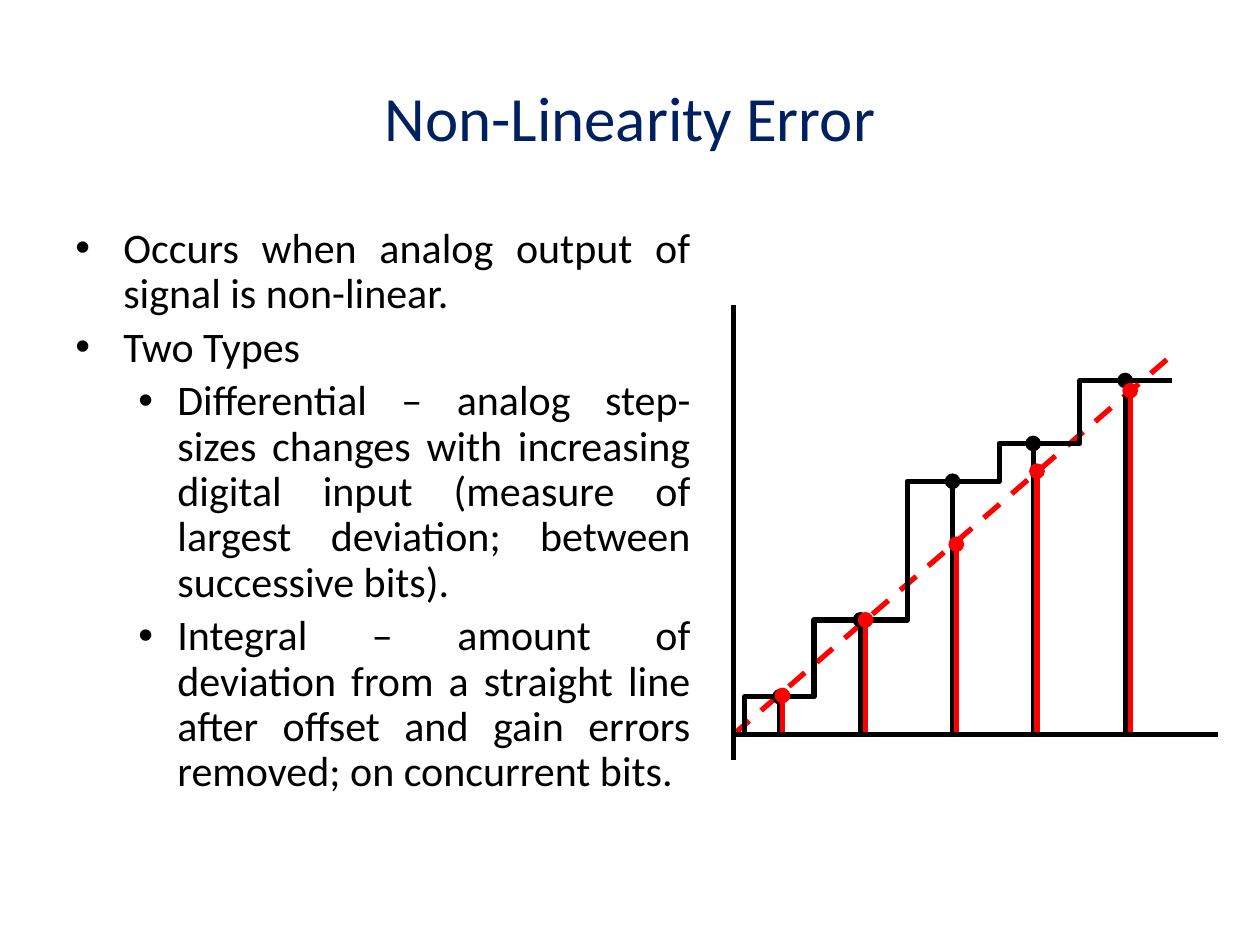
from lxml import etree
from pptx import Presentation
from pptx.dml.color import RGBColor
from pptx.enum import dml, shapes, text
from pptx.oxml.ns import qn
from pptx.util import Inches, Pt


def color(value):
    return RGBColor.from_string(value)


def add_line(start, end, value, dot=False, dashed=False):
    line = page.shapes.add_connector(
        shapes.MSO_CONNECTOR.STRAIGHT, *[Inches(v) for v in (*start, *end)])
    line.line.color.rgb = color(value)
    line.line.width = Pt(3)
    if dashed:
        line.line.dash_style = dml.MSO_LINE.DASH
    if dot:
        etree.SubElement(line.line._get_or_add_ln(), qn("a:tailEnd"), type="oval")
    etree.SubElement(line._element.spPr, qn("a:effectLst"))


BLACK, RED, NAVY = "000000", "FF0000", "002060"
AXIS_X, AXIS_Y = 5.82, 5.83

deck = Presentation()
deck.slide_width, deck.slide_height = Inches(10), Inches(7.5)
page = deck.slides.add_slide(deck.slide_layouts[5])

title = page.shapes.title
title.left, title.top = Inches(0.5), Inches(0.3)
title.width, title.height = Inches(9), Inches(1.25)
title.text_frame.text = "Non-Linearity Error"
title.text_frame.vertical_anchor = text.MSO_ANCHOR.MIDDLE
para = title.text_frame.paragraphs[0]
para.alignment = text.PP_ALIGN.CENTER
para.runs[0].font.name = "Calibri"
para.runs[0].font.size = Pt(36)
para.runs[0].font.color.rgb = color(NAVY)

points = [
    (0, "Occurs when analog output of signal is non-linear."),
    (0, "Two Types"),
    (1, "Differential – analog step-sizes changes with increasing digital input "
        "(measure of largest deviation; between successive bits)."),
    (1, "Integral – amount of deviation from a straight line after offset and "
        "gain errors removed; on concurrent bits."),
]
indents = [(0.38, -0.38), (0.81, -0.31)]
body = page.shapes.add_textbox(Inches(0.5), Inches(1.75), Inches(5.08), Inches(4.95))
frame = body.text_frame
frame.word_wrap = True
frame.text = "\n".join(words for level, words in points)
for para, (level, words) in zip(frame.paragraphs, points):
    para.level = level
    para.alignment = text.PP_ALIGN.JUSTIFY
    para.line_spacing = 0.9
    para.space_before = Pt(4.8)
    margin, hanging = indents[level]
    properties = para._p.get_or_add_pPr()
    properties.set("marL", str(Inches(margin)))
    properties.set("indent", str(Inches(hanging)))
    etree.SubElement(properties, qn("a:buFont"), typeface="Arial")
    etree.SubElement(properties, qn("a:buChar"), char="•")
    font = para.runs[0].font
    font.name = "Calibri"
    font.size = Pt(24)
    font.color.rgb = color(BLACK)

add_line((AXIS_X, AXIS_Y), (9.3, 2.82), RED, dashed=True)

actual = [(6.19, 5.53), (6.83, 4.92), (7.56, 3.82), (8.2, 3.52), (8.93, 3.02)]
ideal = [(6.21, 5.52), (6.87, 4.92), (7.59, 4.32), (8.23, 3.74), (8.97, 3.1)]
for x, y in actual:
    add_line((x, AXIS_Y), (x, y), BLACK, dot=True)

edges = [5.91, 6.46, 7.2, 7.93, 8.57, 9.3]
corners = []
for left, right, (x, y) in zip(edges, edges[1:], actual):
    corners += [(Inches(left), Inches(y)), (Inches(right), Inches(y))]
builder = page.shapes.build_freeform(Inches(edges[0]), Inches(AXIS_Y))
builder.add_line_segments(corners, close=False)
staircase = builder.convert_to_shape()
staircase.shadow.inherit = False
staircase.fill.background()
staircase.line.color.rgb = color(BLACK)
staircase.line.width = Pt(3)

for x, y in ideal:
    add_line((x, AXIS_Y), (x, y), RED, dot=True)

add_line((AXIS_X, AXIS_Y), (9.67, AXIS_Y), BLACK)
add_line((AXIS_X, 6.03), (AXIS_X, 2.42), BLACK)

deck.save("out.pptx")
